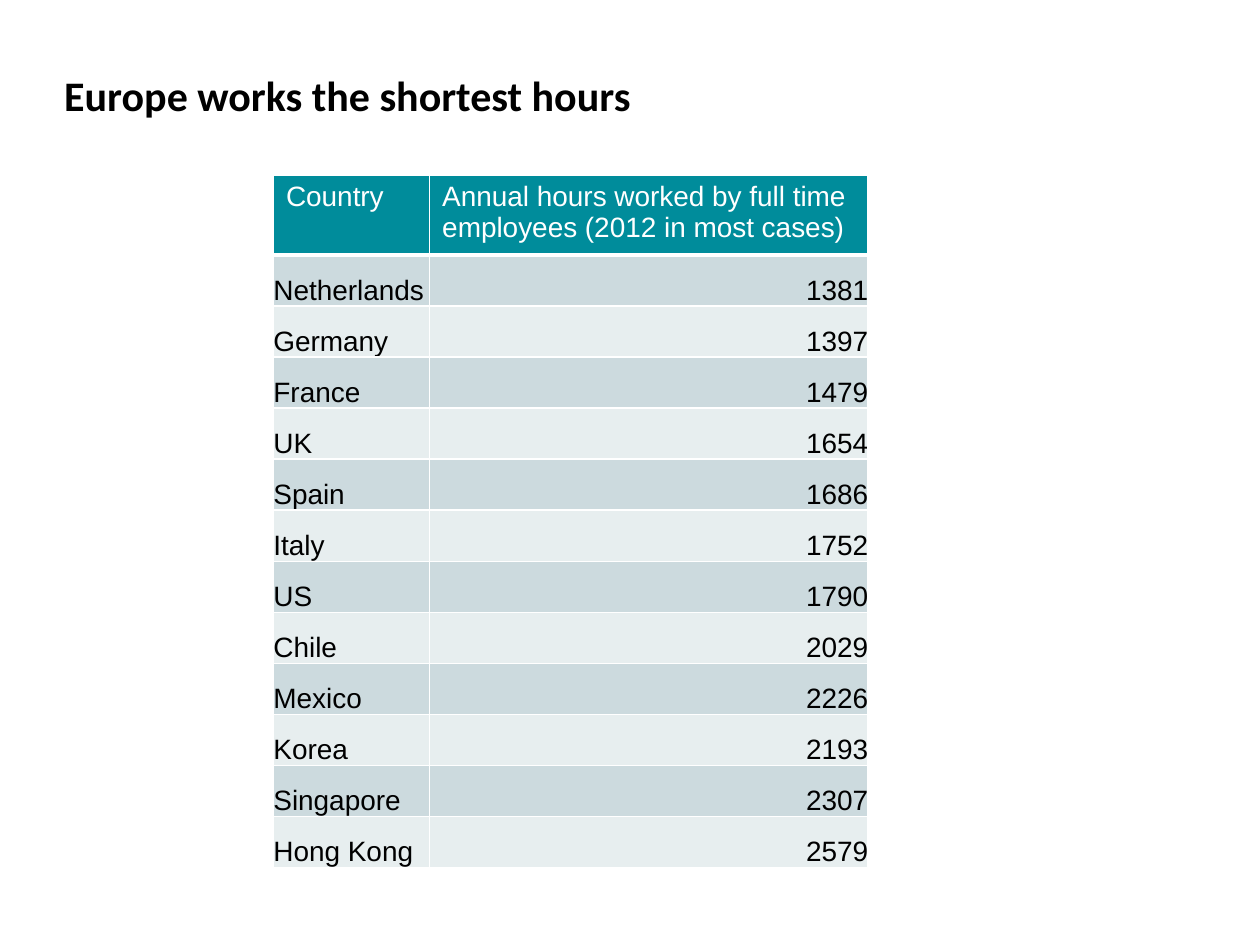
from lxml.etree import SubElement
from pptx import Presentation
from pptx.dml.color import RGBColor
from pptx.enum.text import MSO_ANCHOR as Anchor, PP_ALIGN as Align
from pptx.oxml.ns import qn
from pptx.util import Inches, Pt

BLACK = RGBColor(0x00, 0x00, 0x00)
WHITE = RGBColor(0xFF, 0xFF, 0xFF)
TEAL = RGBColor(0x00, 0x8C, 0x9B)
BANDS = (RGBColor(0xCC, 0xDA, 0xDE), RGBColor(0xE7, 0xEE, 0xEF))

HEADER = ("Country", "Annual hours worked by full time employees (2012 in most cases)")
HOURS = (
    ("Netherlands", 1381),
    ("Germany", 1397),
    ("France", 1479),
    ("UK", 1654),
    ("Spain", 1686),
    ("Italy", 1752),
    ("US", 1790),
    ("Chile", 2029),
    ("Mexico", 2226),
    ("Korea", 2193),
    ("Singapore", 2307),
    ("Hong Kong", 2579),
)


def clear_margins(box):
    box.margin_left = box.margin_top = box.margin_right = box.margin_bottom = 0


def style_font(p, name, size, color, bold=False):
    p.font.name = name
    p.font.size = Pt(size)
    p.font.color.rgb = color
    p.font.bold = bold


def add_title(slide, text):
    sp = slide.shapes.add_textbox(Inches(0.51), Inches(0.51), Inches(8.98), Inches(0.48))
    tf = sp.text_frame
    tf.word_wrap = True
    tf.vertical_anchor = Anchor.MIDDLE
    clear_margins(tf)
    p = tf.paragraphs[0]
    p.text = text
    style_font(p, "Calibri", 24, BLACK, bold=True)


def set_borders(cell, widths):
    tc_pr = cell._tc.get_or_add_tcPr()
    for side, width in widths.items():
        ln = SubElement(tc_pr, qn(f"a:ln{side}"), w=str(Pt(width)))
        fill = SubElement(ln, qn("a:solidFill"))
        SubElement(fill, qn("a:srgbClr"), val=str(WHITE))


def fill_cell(cell, text, fill, color, bottom=1, top=1):
    set_borders(cell, {"L": 1, "R": 1, "T": top, "B": bottom})
    cell.fill.solid()
    cell.fill.fore_color.rgb = fill
    p = cell.text_frame.paragraphs[0]
    p.text = str(text)
    style_font(p, "Arial", 16, color)
    return p


def add_hours_table(slide):
    frame = slide.shapes.add_table(
        len(HOURS) + 1, 2, Inches(2.17), Inches(1.39), Inches(4.72), Inches(5.27)
    )
    table = frame.table
    for column, width in zip(table.columns, (1.24, 3.48)):
        column.width = Inches(width)
    for col, text in enumerate(HEADER):
        fill_cell(table.cell(0, col), text, TEAL, WHITE, bottom=3)
    for row, values in enumerate(HOURS, start=1):
        for col, value in enumerate(values):
            cell = table.cell(row, col)
            p = fill_cell(cell, value, BANDS[(row - 1) % 2], BLACK, top=3 if row == 1 else 1)
            p.alignment = Align.RIGHT if col else Align.LEFT
            cell.vertical_anchor = Anchor.BOTTOM
            clear_margins(cell)


def main():
    prs = Presentation()
    prs.slide_width = Inches(10)
    prs.slide_height = Inches(7.5)
    slide = prs.slides.add_slide(prs.slide_layouts[6])
    add_title(slide, "Europe works the shortest hours")
    add_hours_table(slide)
    prs.save("out.pptx")


if __name__ == "__main__":
    main()
